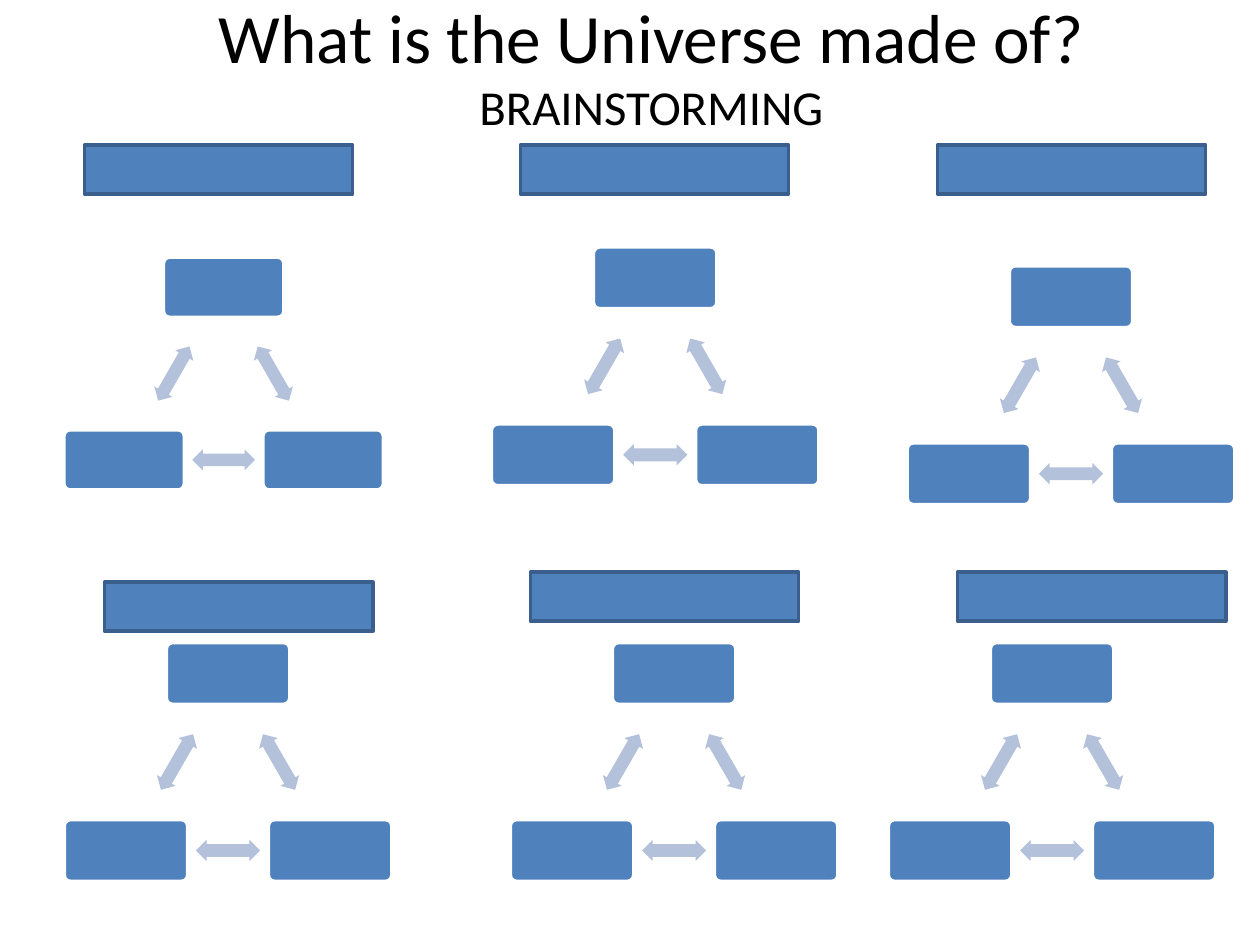
from pptx import Presentation, util as u
from pptx.dml.color import RGBColor
from pptx.enum import shapes, text

BLUE = RGBColor(0x4F, 0x81, 0xBD)
EDGE = RGBColor(0x3A, 0x5F, 0x8C)
PALE = RGBColor(0xB3, 0xC1, 0xDB)
WHITE = RGBColor(0xFF, 0xFF, 0xFF)
BLACK = RGBColor(0, 0, 0)
KIND = shapes.MSO_SHAPE

deck = Presentation()
deck.slide_width, deck.slide_height = u.Inches(10), u.Inches(7.5)
slide = deck.slides.add_slide(deck.slide_layouts[6])

# The slide is a grid of 100 columns by 75 rows.
COL, ROW = deck.slide_width / 100, deck.slide_height / 75


def draw(home, kind, mid, size, fill, edge=None, adjust=(), turn=0):
    """Add a shape to home, centred on mid (column, row)."""
    (x, y), (w, h) = mid, size
    shape = home.add_shape(kind, int((x - w / 2) * COL), int((y - h / 2) * ROW),
                           int(w * COL), int(h * ROW))
    shape.shadow.inherit = False
    shape.rotation = turn
    for i, value in enumerate(adjust):
        shape.adjustments[i] = value
    shape.fill.solid()
    shape.fill.fore_color.rgb = fill
    if edge is None:
        shape.line.fill.background()
    else:
        shape.line.color.rgb = edge
        shape.line.width = u.Pt(2)


def write(para, words, size, font="Calibri", color=BLACK):
    run = para.add_run()
    run.text = words
    run.font.name, run.font.size = font, u.Pt(size)
    run.font.color.rgb = color


# Title
title = slide.shapes.add_textbox(int(6.7 * COL), int(2.1 * ROW),
                                 int(90 * COL), int(6.1 * ROW))
frame = title.text_frame
frame.word_wrap = True
frame.vertical_anchor = text.MSO_ANCHOR.MIDDLE
para = frame.paragraphs[0]
para.alignment = text.PP_ALIGN.CENTER
write(para, "What is the Universe made of?", 39.6)
para.add_line_break()
write(para, "BRAINSTORMING", 27.9)

# Triangles: centre of the top box, and scale
cycles = [(17.75, 22.8, 0.975), (52, 22.05, 1), (85, 23.55, 1),
          (18.1, 53.45, 1), (53.5, 53.45, 1), (83.5, 53.45, 1)]
for x, y, scale in cycles:
    group = slide.shapes.add_group_shape().shapes
    half, drop = 8.1 * scale, 14.05 * scale
    nodes = [(x, y), (x + half, y + drop), (x - half, y + drop)]
    for i, turn in enumerate((60, 180, 300)):
        node, after = nodes[i], nodes[(i + 1) % 3]
        draw(group, KIND.ROUNDED_RECTANGLE, node, (9.8 * scale, 4.9 * scale),
             BLUE, edge=WHITE, adjust=[0.1])
        mid = ((node[0] + after[0]) / 2, (node[1] + after[1]) / 2)
        draw(group, KIND.LEFT_RIGHT_ARROW, mid, (5.1 * scale, 1.7 * scale),
             PALE, adjust=[0.6, 0.5], turn=turn)

# Heading bars
bars = [(17.35, 13.45), (51.95, 13.45), (85.05, 13.45),
        (18.95, 48.15), (52.75, 47.35), (86.65, 47.35)]
for mid in bars:
    draw(slide.shapes, KIND.RECTANGLE, mid, (21.3, 3.9), BLUE, edge=EDGE)

deck.save("out.pptx")
